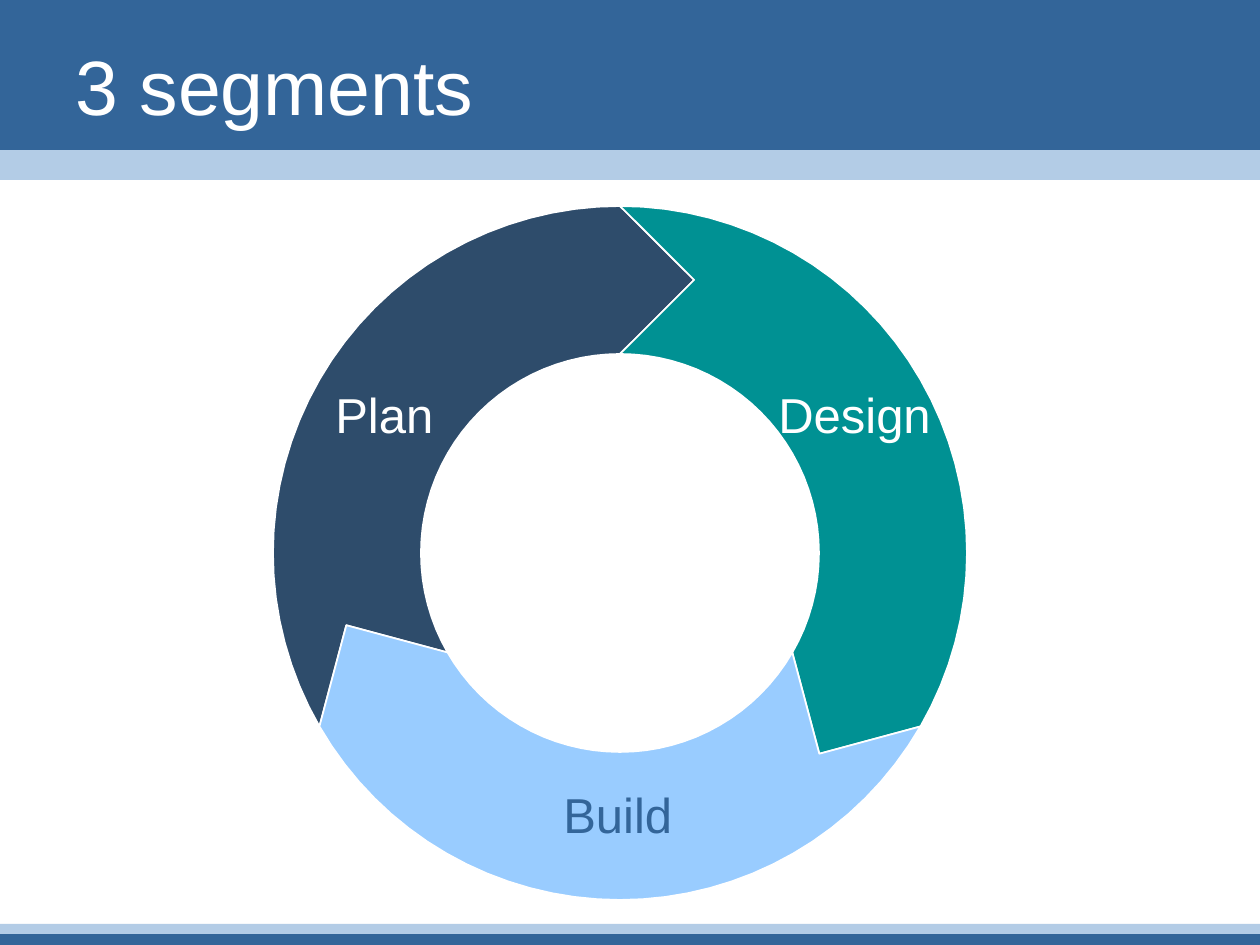
import math

import pptx
import pptx.dml.color
import pptx.enum.shapes
import pptx.enum.text
import pptx.util

EMU_PER_PX = 914400 / 126
NAVY, PALE, WHITE = "336599", "B3CCE6", "FFFFFF"


def emu(px):
    return pptx.util.Emu(round(px * EMU_PER_PX))


def color(hex_text):
    return pptx.dml.color.RGBColor.from_string(hex_text)


def write(text_frame, text, size=28, hex_color=WHITE, font="Arial"):
    run = text_frame.paragraphs[0].add_run()
    run.text = text
    run.font.name = font
    run.font.size = pptx.util.Pt(size)
    run.font.color.rgb = color(hex_color)


class SlideBuilder:
    def __init__(self, slide, outline=WHITE):
        self.slide = slide
        self.outline = outline

    def fill(self, shape, hex_color):
        shape.shadow.inherit = False
        shape.fill.solid()
        shape.fill.fore_color.rgb = color(hex_color)

    def band(self, top, height, hex_color):
        shape = self.slide.shapes.add_shape(
            pptx.enum.shapes.MSO_SHAPE.RECTANGLE,
            0, emu(top), emu(1260), emu(height))
        self.fill(shape, hex_color)
        shape.line.fill.background()

    def polygon(self, points, hex_color):
        vertices = [(emu(x), emu(y)) for x, y in points]
        builder = self.slide.shapes.build_freeform(*vertices[0])
        builder.add_line_segments(vertices[1:], close=True)
        shape = builder.convert_to_shape()
        self.fill(shape, hex_color)
        shape.line.color.rgb = color(self.outline)
        shape.line.width = pptx.util.Pt(1)

    def text(self, box, text, wrap=False, **text_format):
        shape = self.slide.shapes.add_textbox(*map(emu, box))
        frame = shape.text_frame
        frame.word_wrap = wrap
        frame.vertical_anchor = pptx.enum.text.MSO_ANCHOR.MIDDLE
        if not wrap:
            frame.auto_size = pptx.enum.text.MSO_AUTO_SIZE.SHAPE_TO_FIT_TEXT
        write(frame, text, **text_format)


def ring_point(radius, degrees):
    """Point on the ring; angles run clockwise from the top."""
    angle = math.radians(degrees)
    return 620 + radius * math.sin(angle), 553 + radius * math.cos(angle) * -1


def ring_segment(start, sweep=120, outer=347, inner=199, steps=32):
    """Ring arc with an arrow tip at its end and a matching notch at its start."""
    angles = [start + sweep * step / steps for step in range(steps + 1)]
    tip_radius, tip_turn = 283, 15.2
    return ([ring_point(outer, angle) for angle in angles]
            + [ring_point(tip_radius, start + sweep + tip_turn)]
            + [ring_point(inner, angle) for angle in reversed(angles)]
            + [ring_point(tip_radius, start + tip_turn)])


def main():
    presentation = pptx.Presentation()
    presentation.slide_width = emu(1260)
    presentation.slide_height = emu(945)
    builder = SlideBuilder(
        presentation.slides.add_slide(presentation.slide_layouts[6]))

    # Header and footer bands
    for top, height, hex_color in [(0, 165, NAVY), (929, 16, NAVY),
                                   (150, 30, PALE), (924, 10, PALE)]:
        builder.band(top, height, hex_color)

    # Cycle ring
    segments = [
        ("Plan", 240, "2E4C6B", (323, 378, 123, 72), WHITE),
        ("Design", 0, "009193", (766, 378, 178, 72), WHITE),
        ("Build", 120, "99CCFF", (551, 778, 135, 72), NAVY),
    ]
    for _, start, hex_color, _, _ in segments:
        builder.polygon(ring_segment(start), hex_color)

    # Title and segment labels
    builder.text((63, 35, 1143, 100), "3 segments", wrap=True, size=44)
    for label, _, _, box, text_color in segments:
        builder.text(box, label, hex_color=text_color)

    presentation.save("out.pptx")


if __name__ == "__main__":
    main()
